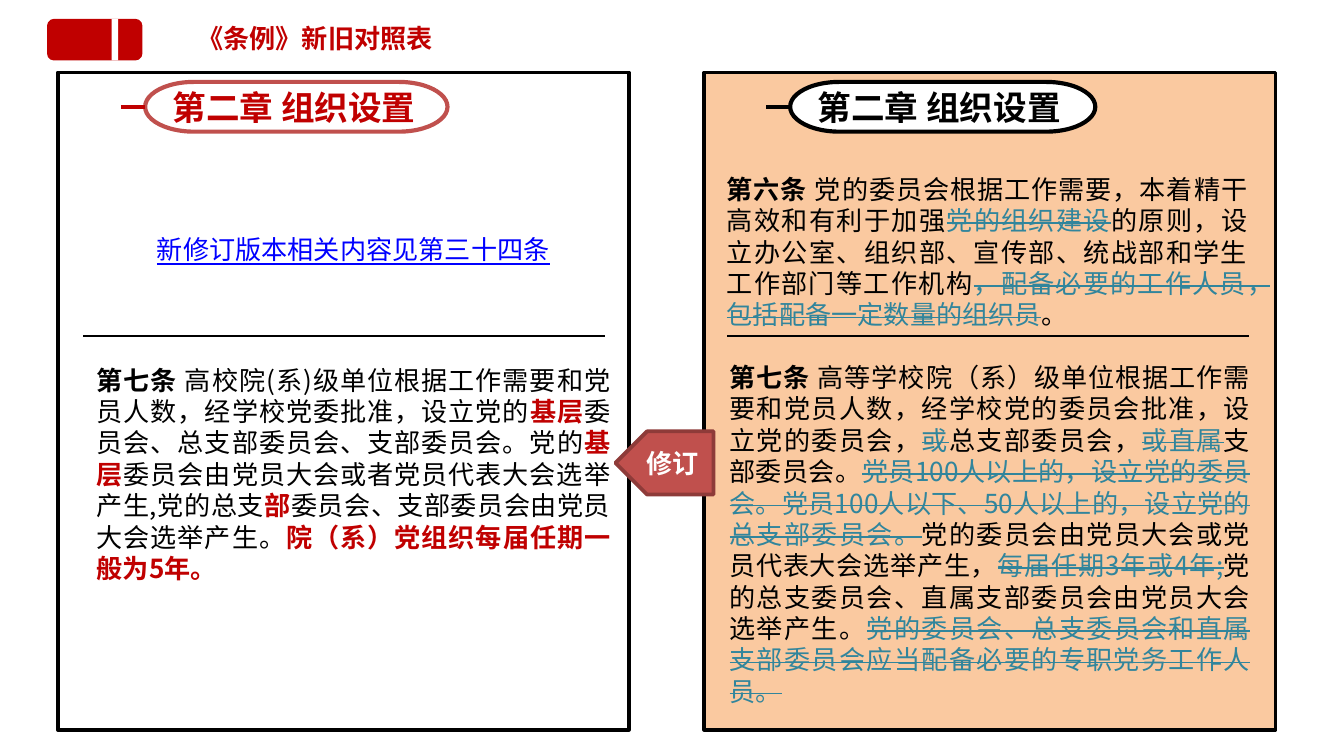
from pptx import Presentation
from pptx.dml.color import RGBColor
from pptx.enum.shapes import MSO_CONNECTOR, MSO_SHAPE
from pptx.enum.text import MSO_ANCHOR, MSO_AUTO_SIZE, PP_ALIGN
from pptx.oxml.ns import qn
from pptx.util import Inches, Pt
from lxml import etree

RECT = MSO_SHAPE.RECTANGLE
ROUND = MSO_SHAPE.ROUNDED_RECTANGLE
PILL = MSO_SHAPE.FLOWCHART_TERMINATOR
PENTAGON = MSO_SHAPE.PENTAGON
STRAIGHT = MSO_CONNECTOR.STRAIGHT
MIDDLE = MSO_ANCHOR.MIDDLE
GROW = MSO_AUTO_SIZE.SHAPE_TO_FIT_TEXT
LEFT, CENTER, JUSTIFY = PP_ALIGN.LEFT, PP_ALIGN.CENTER, PP_ALIGN.JUSTIFY

FONT = "Noto Sans CJK SC"
COLORS = {
    "red": "C00000", "white": "FFFFFF", "black": "000000", "peach": "FAC090",
    "teal": "31859C", "blue": "0000FF", "brick": "C0504D", "maroon": "8E3B39",
}
STYLES = {
    "plain": {"color": "black"},
    "head": {"color": "black", "bold": True},
    "new": {"color": "red", "bold": True},
    "old": {"color": "teal", "strike": True},
    "link": {"color": "blue", "underline": True},
    "label": {"color": "white", "bold": True},
}


def add_run(p, text, size=14, color="black", bold=False, underline=False, strike=False):
    p.line_spacing = Pt(round(size * 1.2, 1))
    r = p.add_run()
    r.text = text
    r.font.size = Pt(size)
    r.font.name = FONT
    r.font.bold = bold
    r.font.color.rgb = RGBColor.from_string(COLORS[color])
    if underline:
        r.font.underline = True
    rPr = r.font._element
    if strike:
        rPr.set("strike", "sngStrike")
    rPr.find(qn("a:latin")).addnext(rPr.makeelement(qn("a:ea"), {"typeface": FONT}))


def style(sp, fill=None, line=None, width=2):
    if fill:
        sp.shadow.inherit = False
        sp.fill.solid()
        sp.fill.fore_color.rgb = RGBColor.from_string(COLORS[fill])
    else:
        etree.SubElement(sp._element.spPr, qn("a:effectLst"))
    if line:
        sp.line.color.rgb = RGBColor.from_string(COLORS[line])
        sp.line.width = Pt(width)
    else:
        sp.line.fill.background()


prs = Presentation()
prs.slide_width = Inches(10)
prs.slide_height = Inches(10) * 9 // 16
s = prs.slides.add_slide(prs.slide_layouts[6])

for kind, x, w, fill in [(ROUND, 0.35, 0.71, "red"), (RECT, 0.83, 0.05, "white")]:
    sp = s.shapes.add_shape(kind, Inches(x), Inches(0.14), Inches(w), Inches(0.31))
    style(sp, fill)

for x, fill in [(5.24, "peach"), (0.43, "white")]:
    sp = s.shapes.add_shape(RECT, Inches(x), Inches(0.54), Inches(4.25), Inches(4.89))
    style(sp, fill, "black")
    clr = sp._element.spPr.find(qn("a:solidFill"))[0]
    etree.SubElement(clr, qn("a:alpha"), val="85000")

texts = [
    (1.36, 0.12, 1.97, 0.34, CENTER, [("《条例》新旧对照表", "new")]),
    (0.62, 2.66, 4.02, 1.75, JUSTIFY, [
        ("第七条 ", "head"),
        ("高校院(系)级单位根据工作需要和党员人数，经学校党委批准，设立党的", "plain"),
        ("基层", "new"),
        ("委员会、总支部委员会、支部委员会。党的", "plain"),
        ("基层", "new"),
        ("委员会由党员大会或者党员代表大会选举产生,党的总支", "plain"),
        ("部", "new"),
        ("委员会、支部委员会由党员大会选举产生。", "plain"),
        ("院（系）党组织每届任期一般为5年。", "new"),
    ]),
    (5.31, 1.24, 4.07, 1.28, JUSTIFY, [
        ("第六条 ", "head"),
        ("党的委员会根据工作需要，本着精干高效和有利于加强", "plain"),
        ("党的组织建设", "old"),
        ("的原则，设立办公室、组织部、宣传部、统战部和学生工作部门等工作机构", "plain"),
        ("，配备必要的工作人员，包括配备一定数量的组织员", "old"),
        ("。", "plain"),
    ]),
    (5.33, 2.64, 4.07, 2.69, JUSTIFY, [
        ("第七条 ", "head"),
        ("高等学校院（系）级单位根据工作需要和党员人数，经学校党的委员会批准，设立党的委员会，", "plain"),
        ("或", "old"),
        ("总支部委员会，", "plain"),
        ("或直属", "old"),
        ("支部委员会。", "plain"),
        ("党员100人以上的，设立党的委员会。党员100人以下、50人以上的，设立党的总支部委员会。", "old"),
        ("党的委员会由党员大会或党员代表大会选举产生，", "plain"),
        ("每届任期3年或4年;", "old"),
        ("党的总支委员会、直属支部委员会由党员大会选举产生。", "plain"),
        ("党的委员会、总支委员会和直属支部委员会应当配备必要的专职党务工作人员。", "old"),
    ]),
    (0.62, 1.69, 4.02, 0.34, CENTER, [("新修订版本相关内容见第三十四条", "link")]),
]
for x, y, w, h, align, runs in texts:
    tf = s.shapes.add_textbox(Inches(x), Inches(y), Inches(w), Inches(h)).text_frame
    tf.word_wrap = True
    tf.auto_size = GROW
    p = tf.paragraphs[0]
    p.alignment = align
    for text, name in runs:
        add_run(p, text, **STYLES[name])

sp = s.shapes.add_shape(PENTAGON, Inches(4.58), Inches(3.21), Inches(0.73), Inches(0.47))
style(sp, "brick", "maroon")
sp._element.spPr.get_or_add_xfrm().set("flipH", "1")
tf = sp.text_frame
tf.vertical_anchor = MIDDLE
p = tf.paragraphs[0]
p.alignment = CENTER
add_run(p, "修订", **STYLES["label"])

for x in (0.62, 5.41):
    rule = s.shapes.add_connector(STRAIGHT, Inches(x), Inches(2.5), Inches(x + 3.88), Inches(2.5))
    style(rule, line="black", width=0.75)

for x, w, border, color in [(1.08, 2.25, "brick", "red"), (5.88, 2.27, "black", "black")]:
    group = s.shapes.add_group_shape()
    sp = group.shapes.add_shape(PILL, Inches(x), Inches(0.61), Inches(w), Inches(0.37))
    style(sp, "white", border, 2.25)
    tf = sp.text_frame
    tf.vertical_anchor = MIDDLE
    tf.margin_top = tf.margin_bottom = 0
    p = tf.paragraphs[0]
    p.alignment = LEFT
    add_run(p, "第二章 组织设置", size=18, color=color, bold=True)
    y = sp.top + sp.height // 2
    stem = group.shapes.add_connector(STRAIGHT, Inches(x - 0.18), y, Inches(x), y)
    stem.end_connect(sp, 1)
    style(stem, line=color, width=2.25)

prs.save("out.pptx")
